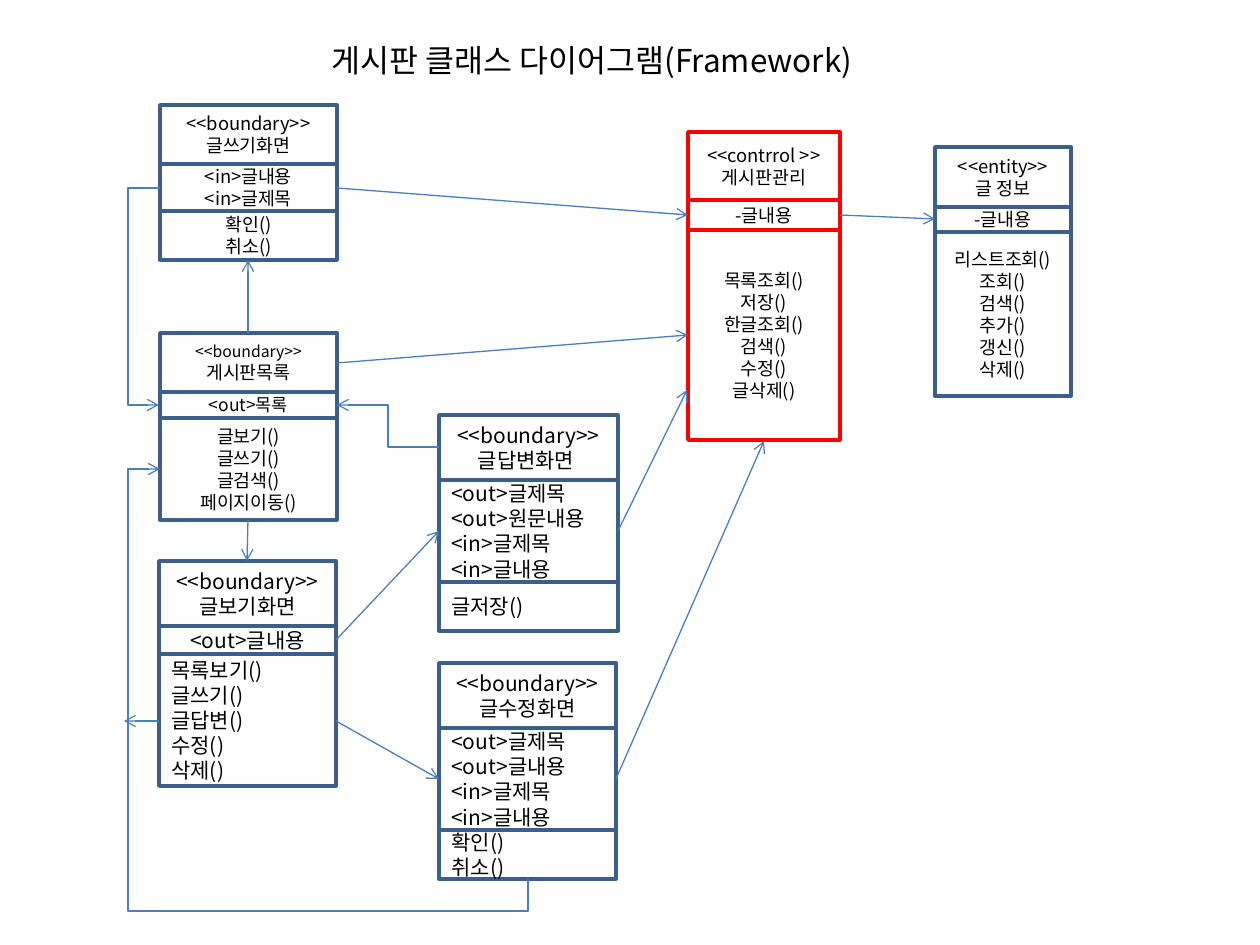
from lxml.etree import SubElement
from pptx import Presentation
from pptx.dml.color import RGBColor
from pptx.enum.shapes import MSO_CONNECTOR as Link, MSO_SHAPE as Preset
from pptx.enum.text import MSO_ANCHOR as Anchor, PP_ALIGN as Align
from pptx.oxml.ns import qn
from pptx.util import Emu, Pt

COLORS = {
    "text": "000000",
    "border": "3A5F8C",
    "arrow": "4B7EBC",
    "control": "FF0000",
    "paper": "FFFFFF",
}
FONT = "Noto Sans CJK KR"
LINE_PITCH = 1.2


def px(length):
    return Emu(round(length * 914400 / 126))


def color(name):
    return RGBColor.from_string(COLORS[name])


def write_text(frame, lines, size=10.5, align=Align.CENTER, anchor=Anchor.MIDDLE,
               wrap=True, special_sizes=None):
    frame.word_wrap = wrap
    frame.vertical_anchor = anchor
    for index, line in enumerate(lines):
        para = frame.paragraphs[0] if index == 0 else frame.add_paragraph()
        points = (special_sizes or {}).get(line, size)
        para.alignment = align
        para.line_spacing = Pt(points * LINE_PITCH)
        span = para.add_run()
        span.text = line
        span.font.size = Pt(points)
        span.font.name = FONT
        span.font.color.rgb = color("text")
        SubElement(span.font._element, qn("a:ea"), typeface=FONT)


class ClassDiagram:
    def __init__(self, page):
        self.page = page
        self.border_width = Pt(2)
        self.arrow_width = Pt(0.75)

    def title(self, text, left, top, width, height):
        box = self.page.shapes.title
        box.left, box.top, box.width, box.height = map(px, (left, top, width, height))
        write_text(box.text_frame, [text], size=18, align=Align.LEFT,
                   anchor=Anchor.TOP, wrap=False)

    def class_box(self, left, width, edges, sections, size=10.5, left_from=3,
                  border="border", fill=None, special_sizes=None):
        group = self.page.shapes.add_group_shape()
        for index, lines in enumerate(sections):
            top, bottom = edges[index:index + 2]
            box = group.shapes.add_shape(
                Preset.RECTANGLE, px(left), px(top), px(width), px(bottom - top))
            box.shadow.inherit = False
            if fill:
                box.fill.solid()
                box.fill.fore_color.rgb = color(fill)
            else:
                box.fill.background()
            box.line.color.rgb = color(border)
            box.line.width = self.border_width
            align = Align.LEFT if index >= left_from else Align.CENTER
            write_text(box.text_frame, lines, size=size, align=align,
                       special_sizes=special_sizes)

    def arrow(self, start, end, kind=Link.STRAIGHT):
        link = self.page.shapes.add_connector(kind, *map(px, (*start, *end)))
        link.line.color.rgb = color("arrow")
        link.line.width = self.arrow_width
        SubElement(link.line._get_or_add_ln(), qn("a:tailEnd"), type="arrow")
        SubElement(link._element.spPr, qn("a:effectLst"))
        return link

    def bend(self, link, *ratios, preset="bentConnector3"):
        geometry = link._element.spPr.find(qn("a:prstGeom"))
        geometry.set("prst", preset)
        guides = geometry.find(qn("a:avLst"))
        if guides is None:
            guides = SubElement(geometry, qn("a:avLst"))
        for number, ratio in enumerate(ratios, 1):
            SubElement(guides, qn("a:gd"), name=f"adj{number}",
                       fmla=f"val {round(ratio * 100000)}")

    def side_elbow(self, start, end, turn_x):
        link = self.arrow(start, end, Link.ELBOW)
        self.bend(link, (turn_x - start[0]) / (end[0] - start[0]))

    def under_elbow(self, start, end, turn_x, turn_y):
        rise, run = start[1] - end[1], start[0] - end[0]
        center_x, center_y = (start[0] + end[0]) / 2, (start[1] + end[1]) / 2
        link = self.arrow((center_x + rise / 2, center_y - run / 2),
                          (center_x - rise / 2, center_y + run / 2), Link.ELBOW)
        link._element.spPr.find(qn("a:xfrm")).set("rot", "5400000")
        self.bend(link, (start[1] - turn_y) / rise, (start[0] - turn_x) / run,
                  preset="bentConnector4")


def main():
    deck = Presentation()
    deck.slide_width, deck.slide_height = px(1260), px(945)
    page = deck.slides.add_slide(deck.slide_layouts[5])
    diagram = ClassDiagram(page)
    diagram.title("게시판 클래스 다이어그램(Framework)", 319, 35, 597, 50)

    diagram.class_box(160, 177, (333, 392, 418, 520), (
        ("<<boundary>>", "게시판목록"),
        ("<out>목록",),
        ("글보기()", "글쓰기()", "글검색()", "페이지이동()"),
    ), special_sizes={"<<boundary>>": 9, "<out>목록": 10})
    diagram.class_box(160, 177, (105, 164, 211, 260), (
        ("<<boundary>>", "글쓰기화면"),
        ("<in>글내용", "<in>글제목"),
        ("확인()", "취소()"),
    ))
    diagram.class_box(935, 136, (147, 207, 232, 396), (
        ("<<entity>>", "글 정보"),
        ("-글내용",),
        ("리스트조회()", "조회()", "검색()", "추가()", "갱신()", "삭제()"),
    ))
    diagram.class_box(688, 152, (132, 200, 230, 440), (
        ("<<contrrol >>", "게시판관리"),
        ("-글내용",),
        ("목록조회()", "저장()", "한글조회()", "검색()", "수정()", "글삭제()"),
    ), border="control", fill="paper")
    diagram.class_box(159, 177, (561, 626, 654, 786), (
        ("<<boundary>>", "글보기화면"),
        ("<out>글내용",),
        ("목록보기()", "글쓰기()", "글답변()", "수정()", "삭제()"),
    ), size=12, left_from=2)
    diagram.class_box(439, 177, (663, 728, 830, 879), (
        ("<<boundary>>", "글수정화면"),
        ("<out>글제목", "<out>글내용", "<in>글제목", "<in>글내용"),
        ("확인()", "취소()"),
    ), size=12, left_from=1)
    diagram.class_box(439, 179, (415, 480, 582, 631), (
        ("<<boundary>>", "글답변화면 "),
        ("<out>글제목", "<out>원문내용", "<in>글제목", "<in>글내용"),
        ("글저장()",),
    ), size=12, left_from=1)

    for start, end in (
        ((248, 333), (248, 260)),
        ((337, 188), (688, 215)),
        ((248, 520), (247, 561)),
        ((337, 363), (688, 335)),
        ((336, 640), (439, 531)),
        ((840, 215), (935, 219)),
        ((336, 721), (439, 779)),
        ((618, 531), (687, 390)),
        ((616, 779), (764, 441)),
        ((159, 721), (124, 721)),
    ):
        diagram.arrow(start, end)
    diagram.side_elbow((160, 188), (159, 405), 128)
    diagram.side_elbow((439, 447), (337, 405), 388)
    diagram.under_elbow((528, 879), (160, 469), 128, 911)

    deck.save("out.pptx")


if __name__ == "__main__":
    main()
